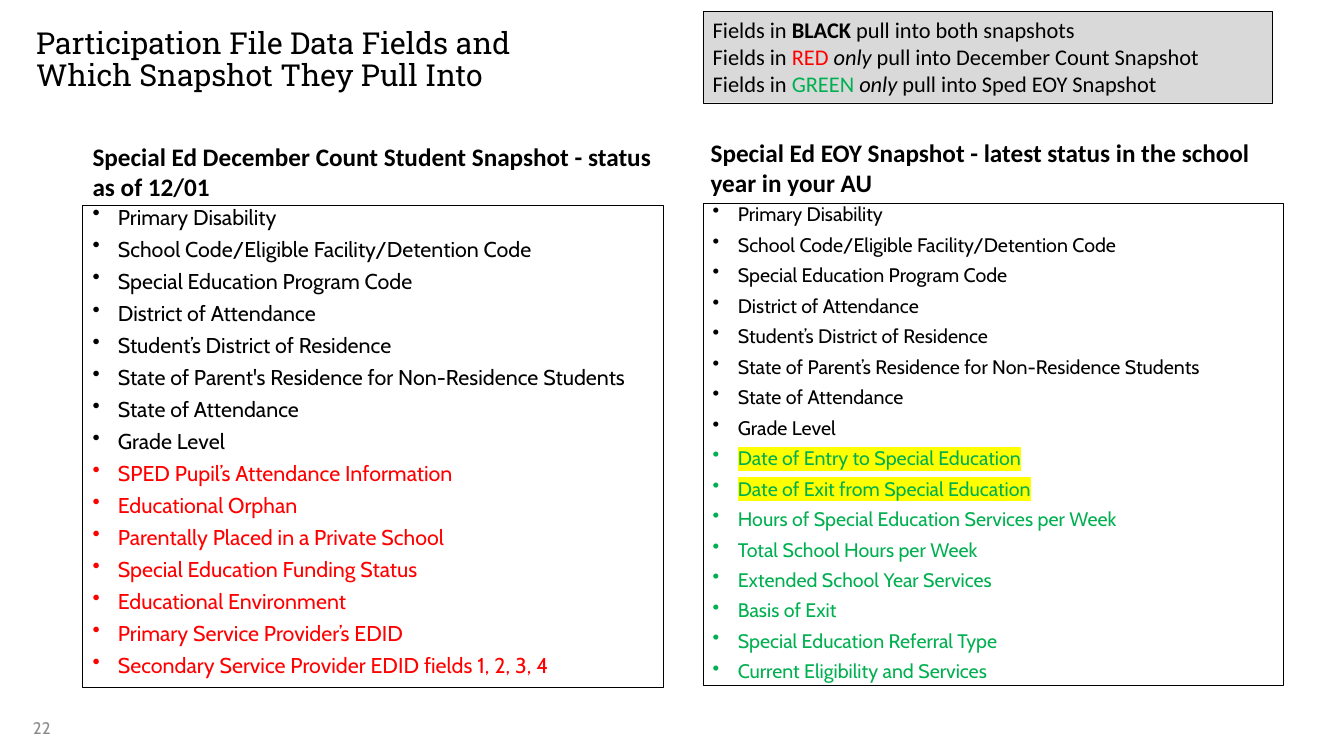
from lxml import etree
from pptx import Presentation
from pptx.dml.color import RGBColor
from pptx.enum.shapes import MSO_SHAPE
from pptx.enum.text import MSO_ANCHOR, PP_ALIGN
from pptx.oxml.ns import qn
from pptx.util import Pt

PX = 9144  # 100 px to the inch
RECT = MSO_SHAPE.RECTANGLE
TOP, MIDDLE = MSO_ANCHOR.TOP, MSO_ANCHOR.MIDDLE
LEFT, RIGHT = PP_ALIGN.LEFT, PP_ALIGN.RIGHT

BLACK = RGBColor(0x00, 0x00, 0x00)
RED = RGBColor(0xFF, 0x00, 0x00)
GREEN = RGBColor(0x00, 0xB0, 0x50)
LIGHT_GRAY = RGBColor(0xD9, 0xD9, 0xD9)
PAGE_GRAY = RGBColor(0x8C, 0x8C, 0x8C)
YELLOW = RGBColor(0xFF, 0xFF, 0x00)

TITLE_FONT, HEAD_FONT, BODY_FONT = "Roboto Slab", "Calibri", "Cabin"

SHARED_FIELDS = [
    "Primary Disability",
    "School Code/Eligible Facility/Detention Code",
    "Special Education Program Code",
    "District of Attendance",
    "Student’s District of Residence",
    "State of Parent’s Residence for Non-Residence Students",
    "State of Attendance",
    "Grade Level",
]
DECEMBER_FIELDS = [
    "SPED Pupil’s Attendance Information",
    "Educational Orphan",
    "Parentally Placed in a Private School",
    "Special Education Funding Status",
    "Educational Environment",
    "Primary Service Provider’s EDID",
    "Secondary Service Provider EDID fields 1, 2, 3, 4",
]
HIGHLIGHTED_FIELDS = [
    "Date of Entry to Special Education",
    "Date of Exit from Special Education",
]
EOY_FIELDS = HIGHLIGHTED_FIELDS + [
    "Hours of Special Education Services per Week",
    "Total School Hours per Week",
    "Extended School Year Services",
    "Basis of Exit",
    "Special Education Referral Type",
    "Current Eligibility and Services",
]
LEGEND = [
    [("Fields in ", BLACK, ""), ("BLACK", BLACK, "b"),
     (" pull into both snapshots", BLACK, "")],
    [("Fields in ", BLACK, ""), ("RED ", RED, ""), ("only", BLACK, "i"),
     (" pull into December Count Snapshot", BLACK, "")],
    [("Fields in ", BLACK, ""), ("GREEN ", GREEN, ""), ("only", BLACK, "i"),
     (" pull into Sped EOY Snapshot", BLACK, "")],
]


def style_run(r, name, size, color, bold=False, italic=False):
    r.font.name = name
    r.font.size = Pt(size)
    r.font.bold = bold
    r.font.italic = italic
    r.font.color.rgb = color


def highlight(r):
    fill = r.font._element.find(qn("a:solidFill"))
    mark = etree.Element(qn("a:highlight"))
    etree.SubElement(mark, qn("a:srgbClr"), val=str(YELLOW))
    fill.addnext(mark)


def add_bullet(p):
    pPr = p._p.get_or_add_pPr()
    pPr.set("marL", str(25 * PX))
    pPr.set("indent", str(-25 * PX))
    etree.SubElement(pPr, qn("a:buChar"), char="•")


def add_text(s, box, text, name, size, color=BLACK, bold=False):
    tf = s.shapes.add_textbox(*(v * PX for v in box)).text_frame
    tf.word_wrap = True
    tf.text = text
    for r in tf.paragraphs[0].runs:
        style_run(r, name, size, color, bold)
    return tf


def add_frame(s, box, fill=None):
    """Add a thin-outlined rectangle and return its text frame."""
    sp = s.shapes.add_shape(RECT, *(v * PX for v in box))
    sp.shadow.inherit = False
    if fill is None:
        sp.fill.background()
    else:
        sp.fill.solid()
        sp.fill.fore_color.rgb = fill
    sp.line.color.rgb = BLACK
    sp.line.width = Pt(0.25)
    tf = sp.text_frame
    tf.word_wrap = True
    tf.vertical_anchor = TOP
    return tf


def add_title(s, box):
    text = "Participation File Data Fields and \vWhich Snapshot They Pull Into"
    tf = add_text(s, box, text, TITLE_FONT, 21.6)
    tf.margin_left = tf.margin_right = tf.margin_top = tf.margin_bottom = 0
    tf.paragraphs[0].line_spacing = 0.9


def add_legend(s, box):
    tf = add_frame(s, box, LIGHT_GRAY)
    for i, parts in enumerate(LEGEND):
        p = tf.add_paragraph() if i else tf.paragraphs[0]
        p.alignment = LEFT
        for text, color, emphasis in parts:
            r = p.add_run()
            r.text = text
            style_run(r, HEAD_FONT, 16, color, emphasis == "b", emphasis == "i")


def add_snapshot(s, box, heading, heading_rect, size, shared, own, own_color):
    """Add a heading, placed relative to the box, over a bulleted field list."""
    x, y, _, _ = box
    dx, dy, w, h = heading_rect
    add_text(s, (x + dx, y + dy, w, h), heading, HEAD_FONT, 18, bold=True)

    tf = add_frame(s, box)
    fields = [(f, BLACK) for f in shared] + [(f, own_color) for f in own]
    for i, (field, color) in enumerate(fields):
        p = tf.add_paragraph() if i else tf.paragraphs[0]
        p.text = field
        add_bullet(p)
        p.alignment = LEFT
        p.line_spacing = 0.7
        if i:
            p.space_before = Pt(10)
        r = p.runs[0]
        style_run(r, BODY_FONT, size, color)
        if field in HIGHLIGHTED_FIELDS:
            highlight(r)


def add_page_number(s, box):
    tf = add_text(s, box, "22", BODY_FONT, 12, PAGE_GRAY)
    tf.vertical_anchor = MIDDLE
    tf.paragraphs[0].alignment = RIGHT


def main():
    prs = Presentation()
    prs.slide_width, prs.slide_height = 1333 * PX, 750 * PX
    s = prs.slides.add_slide(prs.slide_layouts[6])

    add_title(s, (36, 28, 613, 71))
    add_legend(s, (697, 11, 565, 91))
    december_shared = [f.replace("Parent’s", "Parent's") for f in SHARED_FIELDS]
    add_snapshot(
        s, (82, 204, 576, 478),
        "Special Ed December Count Student Snapshot - status as of 12/01",
        (0, -69, 576, 71), 15.3, december_shared, DECEMBER_FIELDS, RED)
    add_snapshot(
        s, (697, 202, 576, 478),
        "Special Ed EOY Snapshot - latest status in the school year in your AU",
        (-2, -71, 567, 101), 14, SHARED_FIELDS, EOY_FIELDS, GREEN)
    add_page_number(s, (12, 704, 48, 37))

    prs.save("out.pptx")


if __name__ == "__main__":
    main()
